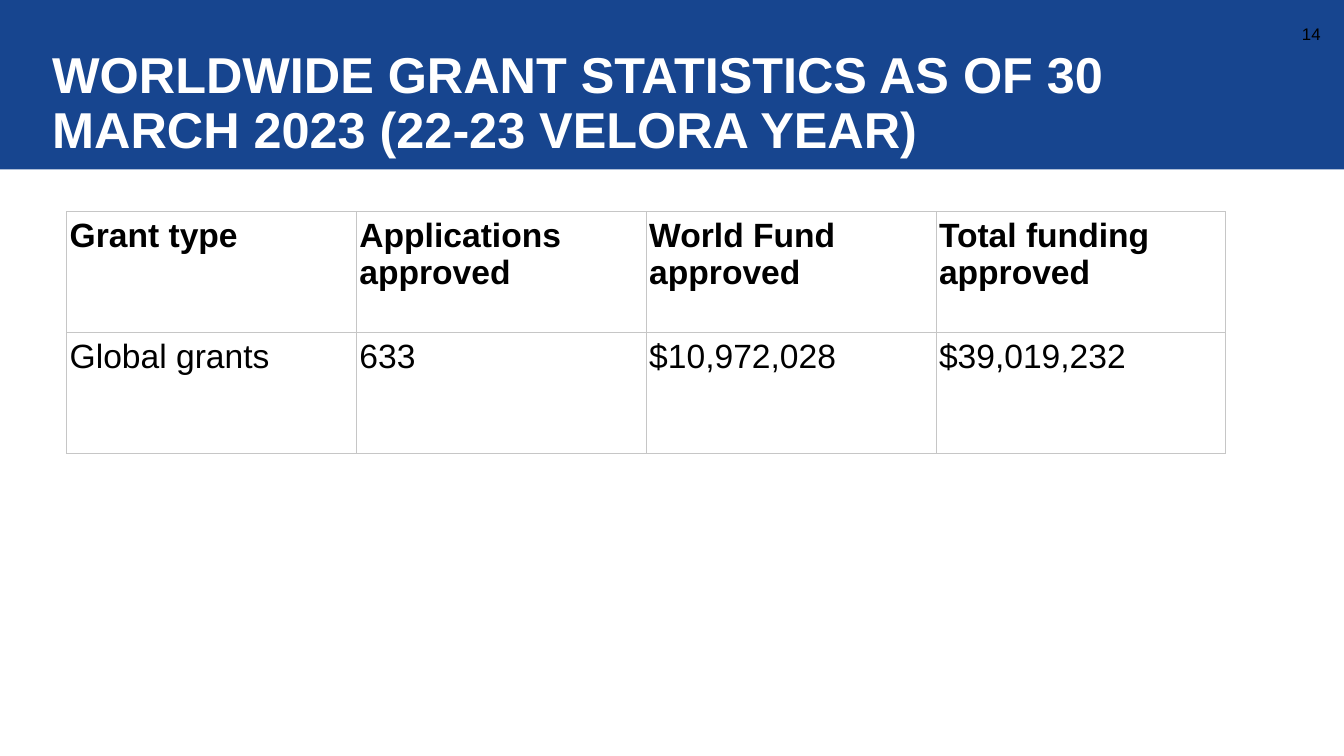
from dataclasses import dataclass
from typing import NamedTuple

from lxml.etree import SubElement
from pptx import Presentation
from pptx.dml.color import RGBColor as RGB
from pptx.enum.shapes import MSO_SHAPE as SHAPE
from pptx.enum.text import MSO_ANCHOR as ANCHOR, PP_ALIGN as ALIGN
from pptx.oxml.ns import qn
from pptx.util import Pt


@dataclass(frozen=True)
class Theme:
    font: str = "Arial"
    band: RGB = RGB(0x17, 0x45, 0x8F)
    paper: RGB = RGB(0xFF, 0xFF, 0xFF)
    ink: RGB = RGB(0, 0, 0)
    rule: RGB = RGB(0xC6, 0xC6, 0xC6)
    title_size: float = 36
    table_size: float = 24
    number_size: float = 12
    rule_width: float = 0.5


class Box(NamedTuple):
    left: float
    top: float
    width: float
    height: float

    def lengths(self) -> list:
        return [Pt(v) for v in self]


@dataclass(frozen=True)
class Label:
    text: str
    box: Box
    size: float
    color: RGB
    anchor: ANCHOR
    insets: tuple
    bold: bool = False
    align: ALIGN = ALIGN.LEFT
    spacing: float = 1.0


THEME = Theme()
SLIDE_W, SLIDE_H = 960, 540
BAND = Box(0, 0, SLIDE_W, 121)
TABLE = Box(47.6, 151.2, 828, 172.8)
CELL_INSETS = (2.2, 3.6, 2.2, 2.9)

LABELS = [
    Label("WORLDWIDE GRANT STATISTICS AS OF 30 MARCH 2023 (22-23 VELORA YEAR)",
          Box(30.2, 0, 905.8, 121), THEME.title_size, THEME.paper,
          ANCHOR.BOTTOM, (7.2, 0, 7.2, 7.2), bold=True, spacing=0.9),
    Label("14", Box(917.3, 9.4, 33.1, 28.8), THEME.number_size, THEME.ink,
          ANCHOR.MIDDLE, (7.2, 3.6, 7.2, 3.6), align=ALIGN.RIGHT),
]

GRANTS = [
    ["Grant type", "Applications approved", "World Fund approved",
     "Total funding approved"],
    ["Global grants", "633", "$10,972,028", "$39,019,232"],
]


def set_text(tf, text: str, *, size: float, color: RGB, bold: bool = False,
             align: ALIGN = ALIGN.LEFT, spacing: float = 1.0) -> None:
    p = tf.paragraphs[0]
    p.alignment, p.line_spacing = align, spacing
    r = p.add_run()
    r.text = text
    r.font.name, r.font.size, r.font.bold = THEME.font, Pt(size), bold
    r.font.color.rgb = color


def set_insets(frame, insets: tuple) -> None:
    (frame.margin_left, frame.margin_top,
     frame.margin_right, frame.margin_bottom) = [Pt(v) for v in insets]


def add_band(s, box: Box) -> None:
    sp = s.shapes.add_shape(SHAPE.RECTANGLE, *box.lengths())
    sp.shadow.inherit = False
    sp.fill.solid()
    sp.fill.fore_color.rgb = THEME.band
    sp.line.fill.background()


def add_label(s, label: Label) -> None:
    tf = s.shapes.add_textbox(*label.box.lengths()).text_frame
    tf.word_wrap = True
    tf.vertical_anchor = label.anchor
    set_insets(tf, label.insets)
    set_text(tf, label.text, size=label.size, color=label.color,
             bold=label.bold, align=label.align, spacing=label.spacing)


def add_borders(cell) -> None:
    # Borders must come before the fill in the cell properties
    tc_pr = cell._tc.get_or_add_tcPr()
    for side in ("a:lnL", "a:lnR", "a:lnT", "a:lnB"):
        ln = SubElement(tc_pr, qn(side), w=str(Pt(THEME.rule_width)))
        fill = SubElement(ln, qn("a:solidFill"))
        SubElement(fill, qn("a:srgbClr"), val=str(THEME.rule))


def add_grants_table(s, rows: list, box: Box) -> None:
    table = s.shapes.add_table(len(rows), len(rows[0]), *box.lengths()).table
    table.horz_banding = False
    for row in table.rows:
        row.height = Pt(box.height / len(rows))
    for i, row in enumerate(rows):
        for j, text in enumerate(row):
            cell = table.cell(i, j)
            add_borders(cell)
            cell.fill.solid()
            cell.fill.fore_color.rgb = THEME.paper
            set_insets(cell, CELL_INSETS)
            set_text(cell.text_frame, text, size=THEME.table_size,
                     color=THEME.ink, bold=i == 0)


def main() -> None:
    prs = Presentation()
    prs.slide_width, prs.slide_height = Pt(SLIDE_W), Pt(SLIDE_H)
    s = prs.slides.add_slide(prs.slide_layouts[6])

    # Header band, title and page number
    add_band(s, BAND)
    for label in LABELS:
        add_label(s, label)

    # Grant figures
    add_grants_table(s, GRANTS, TABLE)

    prs.save("out.pptx")


if __name__ == "__main__":
    main()
